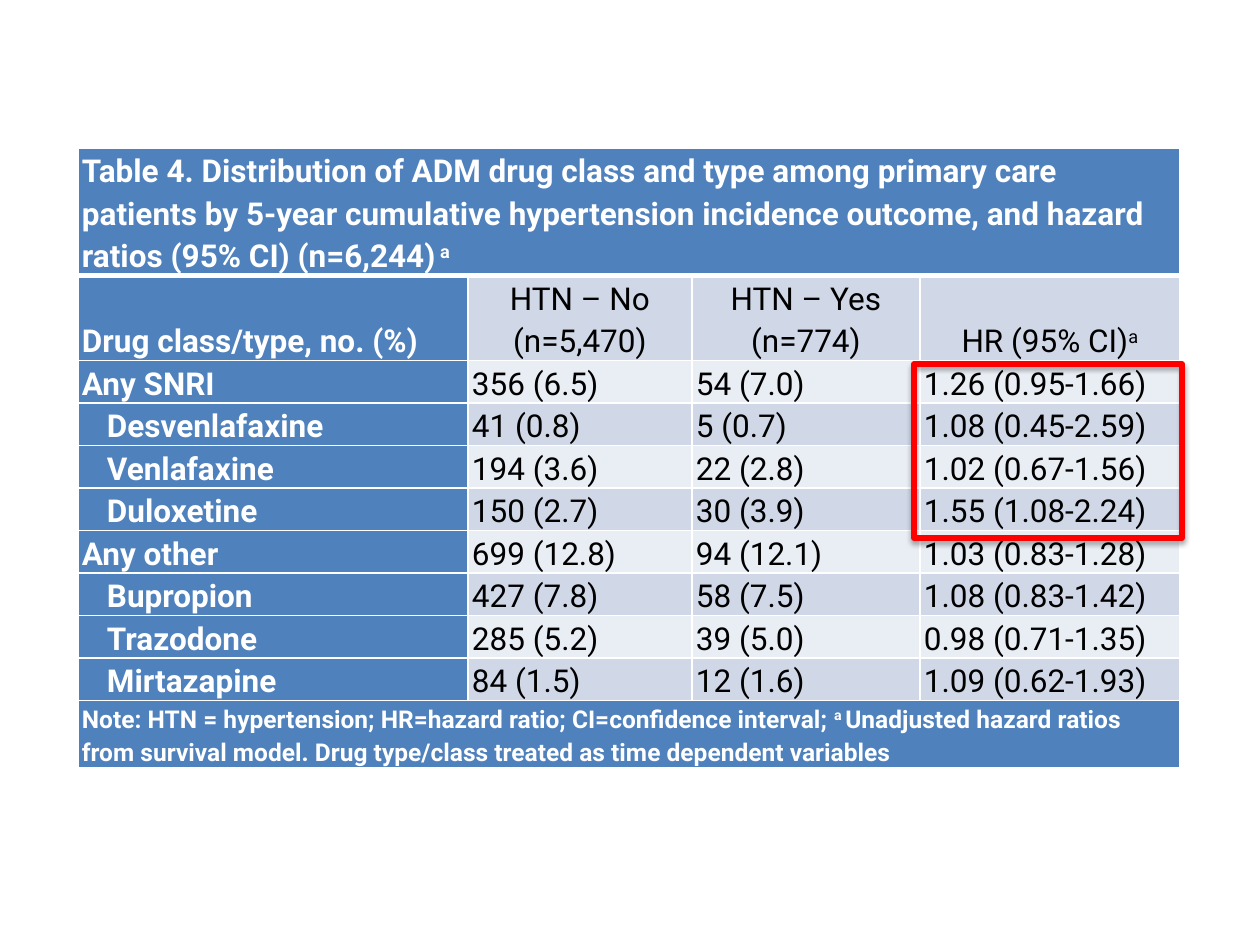
from dataclasses import dataclass
from lxml.etree import SubElement as Sub
from pptx import Presentation
from pptx.dml.color import RGBColor as Rgb
from pptx.enum.shapes import MSO_SHAPE as Shape
from pptx.enum.text import MSO_ANCHOR as Anchor, PP_ALIGN as Align
from pptx.oxml.ns import qn
from pptx.util import Pt

BLUE = Rgb(0x4F, 0x81, 0xBD)
DARK = Rgb(0xD0, 0xD8, 0xE8)
PALE = Rgb(0xE9, 0xED, 0xF4)
WHITE = Rgb(0xFF, 0xFF, 0xFF)
BLACK = Rgb(0, 0, 0)
RED = Rgb(0xFF, 0, 0)
SIDES = ("lnL", "lnR", "lnT", "lnB")

TITLE = ("Table 4. Distribution of ADM drug class and type among primary care "
         "patients by 5-year cumulative hypertension incidence outcome, and "
         "hazard ratios (95% CI) (n=6,244)^ a")
NOTE = ("Note: HTN = hypertension; HR=hazard ratio; CI=confidence interval; "
        "^a ^Unadjusted hazard ratios from survival model. Drug type/class "
        "treated as time dependent variables")
HEADS = ("Drug class/type, no. (%)", "HTN – No\n(n=5,470)",
         "HTN – Yes\n(n=774)", "HR (95% CI)^a")


@dataclass
class Drug:
    name: str
    no: str
    yes: str
    ratio: str
    sub: bool = True


DRUGS = (
    Drug("Any SNRI", "356 (6.5)", "54 (7.0)", "1.26 (0.95-1.66)", False),
    Drug("Desvenlafaxine", "41 (0.8)", "5 (0.7)", "1.08 (0.45-2.59)"),
    Drug("Venlafaxine", "194 (3.6)", "22 (2.8)", "1.02 (0.67-1.56)"),
    Drug("Duloxetine", "150 (2.7)", "30 (3.9)", "1.55 (1.08-2.24)"),
    Drug("Any other", "699 (12.8)", "94 (12.1)", "1.03 (0.83-1.28)", False),
    Drug("Bupropion", "427 (7.8)", "58 (7.5)", "1.08 (0.83-1.42)"),
    Drug("Trazodone", "285 (5.2)", "39 (5.0)", "0.98 (0.71-1.35)"),
    Drug("Mirtazapine", "84 (1.5)", "12 (1.6)", "1.09 (0.62-1.93)"),
)
COLS = (390, 224, 228, 260)
ROWS = (126, 85, *[42] * len(DRUGS), 67)


@dataclass
class Look:
    fill: Rgb
    size: int = 18
    align: Align = Align.LEFT
    dent: int = 0

    def font(self) -> dict:
        head = self.fill == BLUE
        return {"name": "Roboto", "size": Pt(self.size), "bold": head}

    def ink(self) -> Rgb:
        return WHITE if self.fill == BLUE else BLACK


def px(num: int) -> int:
    return round(num * 914400 / 126)


def apply(obj, vals: dict) -> None:
    for key, val in vals.items():
        setattr(obj, key, val)


def edge(cell, top: int = 1, base: int = 1) -> None:
    props = cell._tc.get_or_add_tcPr()
    for side, wide in zip(SIDES, (1, 1, top, base)):
        line = Sub(props, qn(f"a:{side}"), w=str(Pt(wide)))
        Sub(Sub(line, qn("a:solidFill")), qn("a:srgbClr"), val=str(WHITE))


def write(cell, text: str, look: Look) -> None:
    apply(cell, {"margin_left": px(4), "margin_right": px(4),
                 "margin_top": 0, "margin_bottom": 0,
                 "vertical_anchor": Anchor.BOTTOM})
    frame = cell.text_frame
    for num, line in enumerate(text.split("\n")):
        para = frame.add_paragraph() if num else frame.paragraphs[0]
        apply(para, {"alignment": look.align, "line_spacing": 1.15})
        if look.dent:
            para._p.get_or_add_pPr().set("marL", str(px(look.dent)))
        for part, words in enumerate(line.split("^")):
            run = para.add_run()
            run.text = words
            apply(run.font, look.font())
            run.font.color.rgb = look.ink()
            if part % 2:
                run._r.get_or_add_rPr().set("baseline", "30000")


def paint(cell, fill: Rgb) -> None:
    cell.fill.solid()
    cell.fill.fore_color.rgb = fill


def draw_table(slide) -> None:
    last = len(ROWS) - 1
    table = slide.shapes.add_table(len(ROWS), len(COLS), px(78), px(148),
                                   px(sum(COLS)), px(sum(ROWS))).table
    apply(table, {"first_row": False, "horz_banding": False})
    for col, wide in zip(table.columns, COLS):
        col.width = px(wide)
    for row, high in zip(table.rows, ROWS):
        row.height = px(high)
    for row in range(len(ROWS)):
        for col in range(len(COLS)):
            cell = table.cell(row, col)
            edge(cell, 3 if row == 1 else 1, 3 if row == 0 else 1)
            band = PALE if row % 2 == 0 else DARK
            paint(cell, BLUE if col == 0 or row in (0, last) else band)
    for row, text, size in ((0, TITLE, 18), (last, NOTE, 14)):
        cell = table.cell(row, 0)
        cell.merge(table.cell(row, len(COLS) - 1))
        write(cell, text, Look(BLUE, size))
    for col, text in enumerate(HEADS):
        look = Look(DARK, align=Align.CENTER) if col else Look(BLUE)
        write(table.cell(1, col), text, look)
    for row, drug in enumerate(DRUGS, 2):
        write(table.cell(row, 0), drug.name, Look(BLUE, dent=25 * drug.sub))
        for col, text in enumerate((drug.no, drug.yes, drug.ratio), 1):
            write(table.cell(row, col), text, Look(DARK))


def draw_frame(slide) -> None:
    box = slide.shapes.add_shape(Shape.RECTANGLE, px(914), px(364),
                                 px(268), px(174))
    box.fill.background()
    box.line.color.rgb = RED
    box.line.width = Pt(3)
    box.shadow.inherit = False
    glow = Sub(box._element.spPr.find(qn("a:effectLst")), qn("a:outerShdw"),
               blurRad=str(Pt(3.1)), dist=str(Pt(1.8)), dir="5400000",
               rotWithShape="0")
    tint = Sub(glow, qn("a:srgbClr"), val=str(BLACK))
    Sub(tint, qn("a:alpha"), val="35000")


def main() -> None:
    deck = Presentation()
    apply(deck, {"slide_width": px(1260), "slide_height": px(945)})
    slide = deck.slides.add_slide(deck.slide_layouts[6])
    draw_table(slide)
    draw_frame(slide)
    deck.save("out.pptx")


if __name__ == "__main__":
    main()
